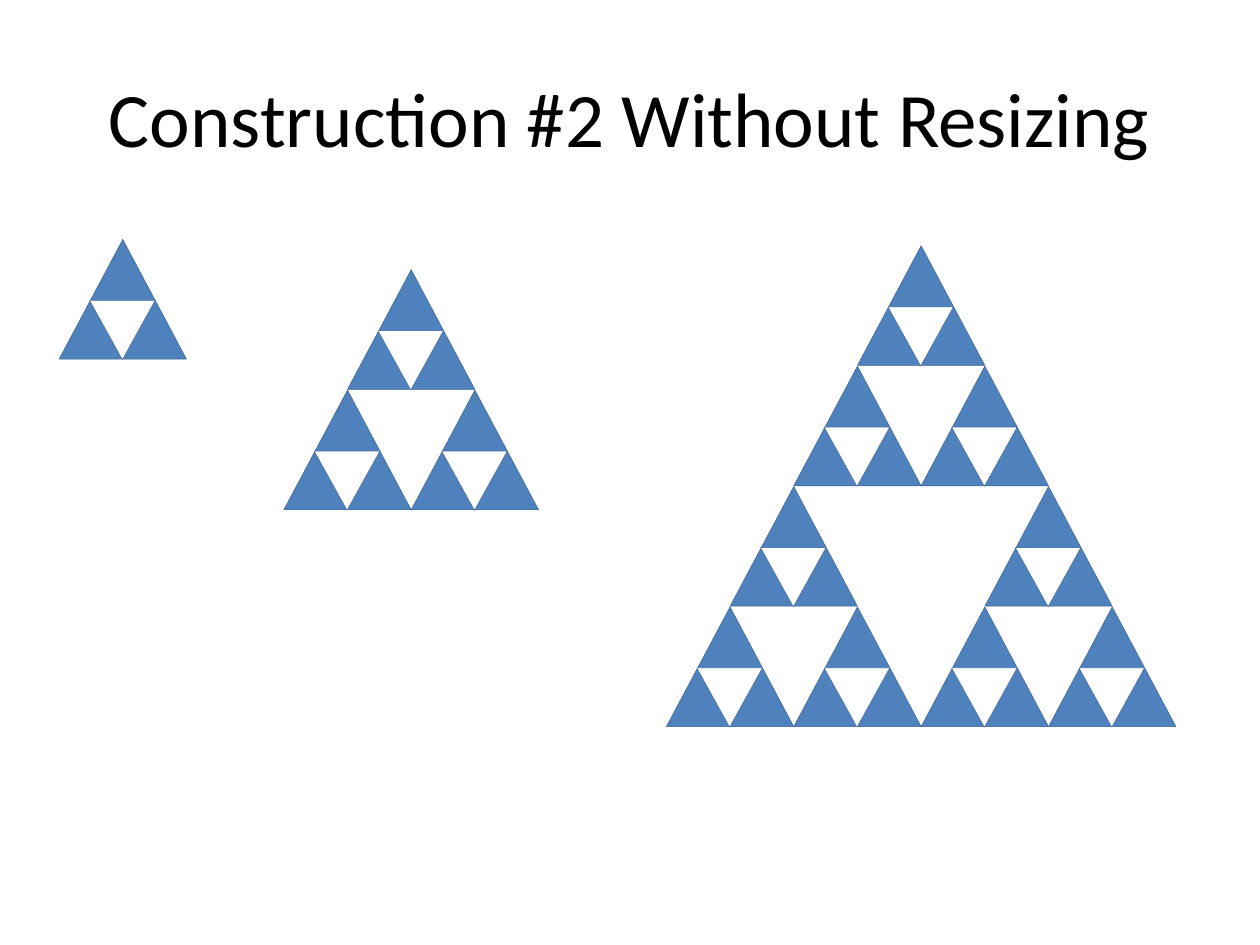
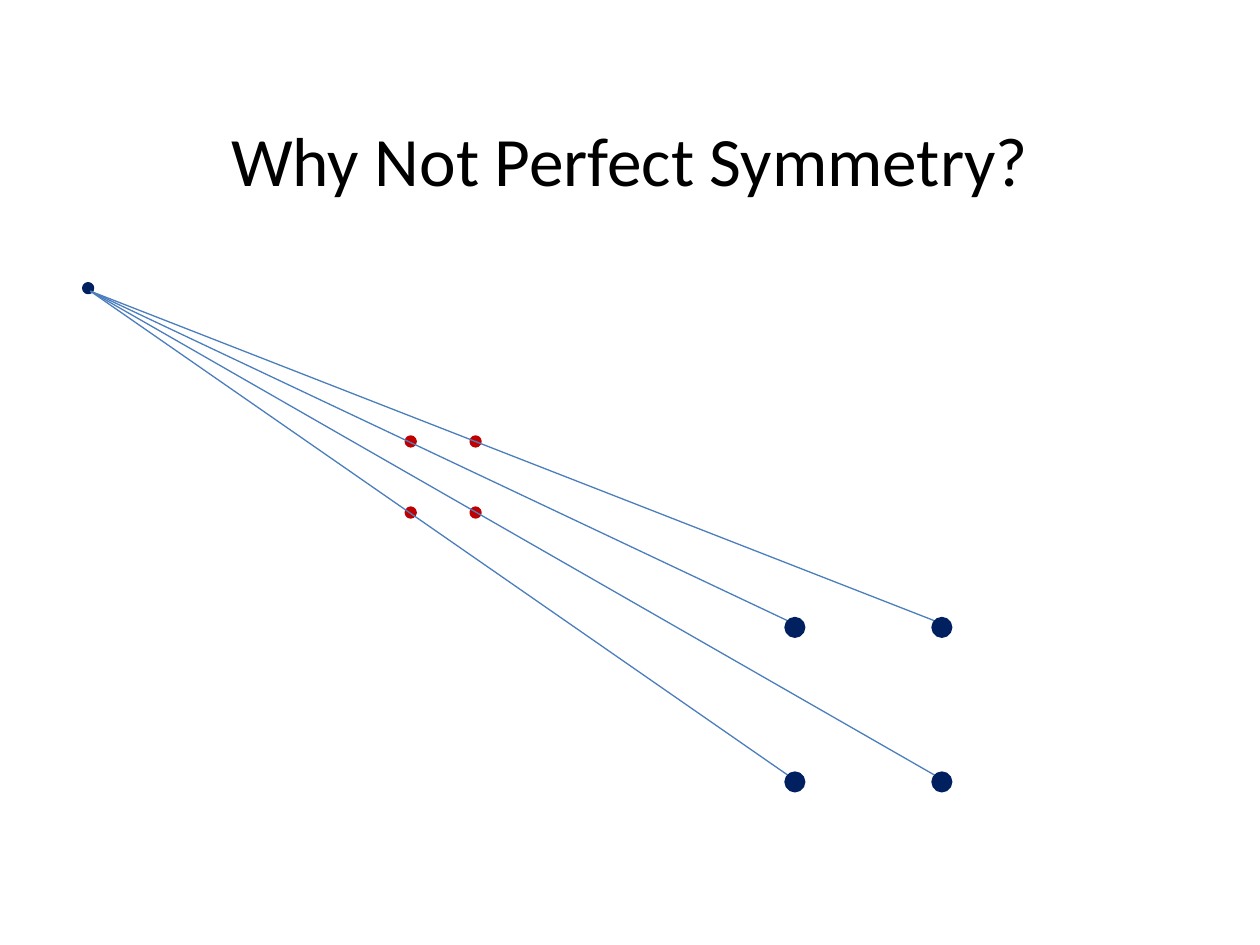
from dataclasses import dataclass
from itertools import product
from typing import Iterator

from lxml import etree
from pptx import Presentation
from pptx.dml.color import RGBColor
from pptx.enum.shapes import MSO_CONNECTOR, MSO_SHAPE
from pptx.enum.text import MSO_ANCHOR, PP_ALIGN
from pptx.oxml.ns import qn
from pptx.util import Pt

STRAIGHT = MSO_CONNECTOR.STRAIGHT
PEAK = MSO_SHAPE.ISOSCELES_TRIANGLE
OVAL = MSO_SHAPE.OVAL
MIDDLE = MSO_ANCHOR.MIDDLE
CENTER = PP_ALIGN.CENTER

FONT = "Calibri"
BLACK = RGBColor(0x00, 0x00, 0x00)
WHITE = RGBColor(0xFF, 0xFF, 0xFF)
BLUE = RGBColor(0x4F, 0x81, 0xBD)
EDGE = RGBColor(0x3A, 0x5F, 0x8C)
RAY = RGBColor(0x4B, 0x7E, 0xBC)
NAVY = RGBColor(0x00, 0x20, 0x60)
RED = RGBColor(0xC0, 0x00, 0x00)

COL, ROW = 36.4, 68.8
TILE_W, TILE_H = 72.8, 68.4
HOLE_X, HOLE_Y, HOLE_W, HOLE_H = 17.4, 34.9, 37.4, 33.8


@dataclass(frozen=True)
class Stack:
    left: float
    top: float
    depth: int


@dataclass(frozen=True)
class Dot:
    left: float
    top: float
    size: float
    color: RGBColor


def add_text(slide, text: str, left: float, top: float, width: float, height: float,
             *, size: float, color: RGBColor = BLACK) -> None:
    frame = slide.shapes.add_textbox(Pt(left), Pt(top), Pt(width), Pt(height)).text_frame
    frame.word_wrap = True
    frame.vertical_anchor = MIDDLE
    para = frame.paragraphs[0]
    para.alignment = CENTER
    run = para.add_run()
    run.text = text
    run.font.name = FONT
    run.font.size = Pt(size)
    run.font.color.rgb = color


def add_title(slide, text: str, *, top: float = 21.6, size: float = 44) -> None:
    add_text(slide, text, 36, top, 648, 90, size=size)


def add_form(shapes, kind, left: float, top: float, width: float, height: float,
             *, fill: RGBColor, line: RGBColor, weight: float, turn: float = 0) -> None:
    form = shapes.add_shape(kind, Pt(left), Pt(top), Pt(width), Pt(height))
    form.shadow.inherit = False
    form.fill.solid()
    form.fill.fore_color.rgb = fill
    form.line.color.rgb = line
    form.line.width = Pt(weight)
    form.rotation = turn


def corners(step: int) -> list[tuple[int, int]]:
    return [(0, 0), (-step, step), (step, step)]


def cells(depth: int) -> Iterator[tuple[int, int]]:
    if depth == 0:
        yield 0, 0
        return
    for (col, row), (dx, dy) in product(corners(2 ** (depth - 1)), cells(depth - 1)):
        yield col + dx, row + dy


def add_stack(slide, stack: Stack) -> None:
    shapes = slide.shapes.add_group_shape().shapes
    for col, row in cells(stack.depth):
        left, top = stack.left + col * COL, stack.top + row * ROW
        add_form(shapes, PEAK, left, top, TILE_W, TILE_H,
                 fill=BLUE, line=EDGE, weight=0.25)
        add_form(shapes, PEAK, left + HOLE_X, top + HOLE_Y, HOLE_W, HOLE_H,
                 fill=WHITE, line=EDGE, weight=0.25, turn=180)


def add_dot(slide, dot: Dot) -> None:
    add_form(slide.shapes, OVAL, dot.left, dot.top, dot.size, dot.size,
             fill=dot.color, line=dot.color, weight=2)


def add_ray(slide, hub: Dot, end: Dot) -> None:
    ray = slide.shapes.add_connector(
        STRAIGHT, Pt(hub.left + 3.8), Pt(hub.top + 4.2),
        Pt(end.left + 1.5), Pt(end.top + 1.5))
    ray.line.color.rgb = RAY
    ray.line.width = Pt(0.75)
    etree.SubElement(ray._element.spPr, qn("a:effectLst"))


def draw_stacks(slide) -> None:
    add_title(slide, "Construction #2 Without Resizing")
    left, top = 490, 140.4
    stacks = [Stack(33.8, 136.8, 0), Stack(198.6, 154.1, 1)]
    stacks += [Stack(left + col * COL, top + row * ROW, 1) for col, row in corners(2)]
    for stack in stacks:
        add_stack(slide, stack)


def draw_rays(slide) -> None:
    add_title(slide, "Why Not Perfect Symmetry?", top=45.6, size=39.6)
    hub = Dot(47.9, 162.2, 5, NAVY)
    near = [Dot(left, top, 5, RED)
            for top, left in product((249.8, 290.4), (232.2, 269.3))]
    far = [Dot(left, top, 10, NAVY)
           for top, left in product((353.5, 441.8), (449.2, 533.2))]
    for dot in near + [hub]:
        add_dot(slide, dot)
    for dot in far:
        add_ray(slide, hub, dot)
    for dot in far:
        add_dot(slide, dot)


def main() -> None:
    deck = Presentation()
    deck.slide_width, deck.slide_height = Pt(720), Pt(540)
    blank = deck.slide_layouts[6]
    for draw in (draw_stacks, draw_rays):
        draw(deck.slides.add_slide(blank))
    deck.save("out.pptx")


if __name__ == "__main__":
    main()
